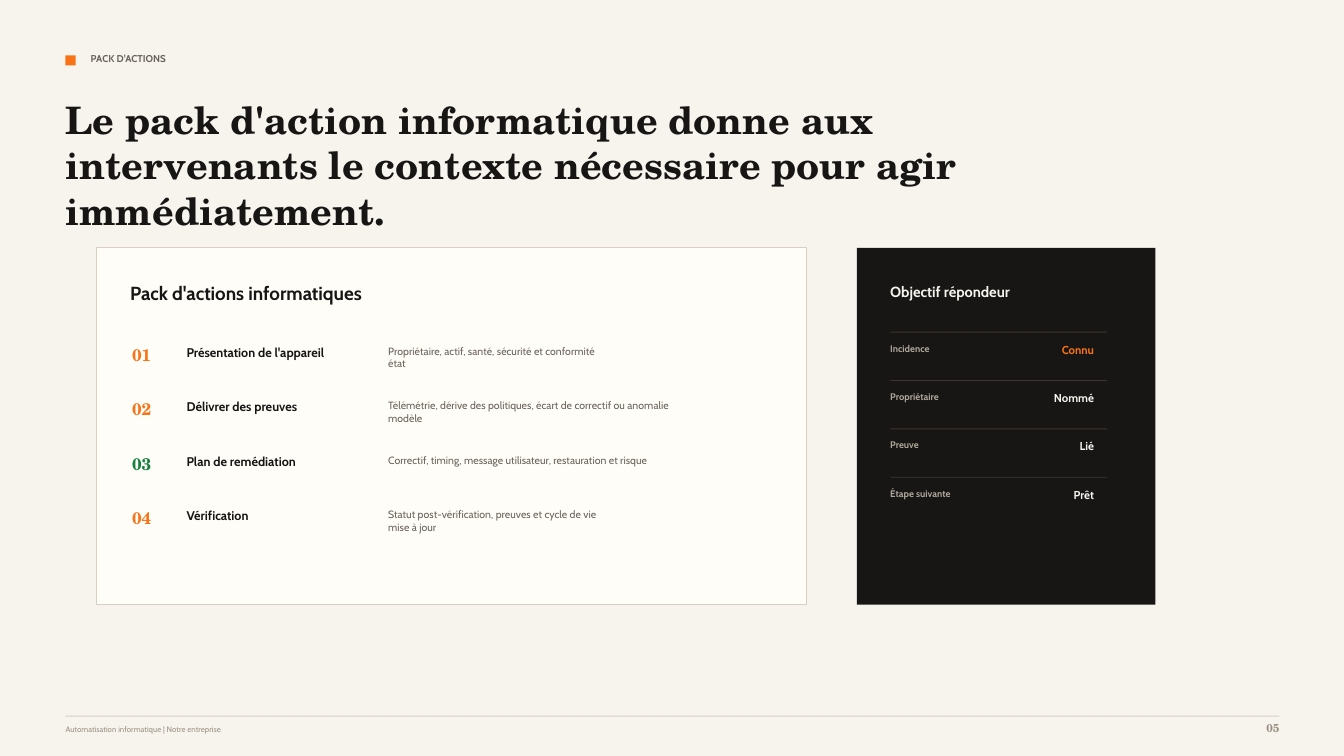
from pptx import Presentation
from pptx.dml.color import RGBColor
from pptx.enum.shapes import MSO_SHAPE
from pptx.enum.text import MSO_ANCHOR, PP_ALIGN
from pptx.util import Emu, Pt

RECT = MSO_SHAPE.RECTANGLE
TOP = MSO_ANCHOR.TOP
LEFT, RIGHT = PP_ALIGN.LEFT, PP_ALIGN.RIGHT

PX = 9144
W, H = 1333, 750
SANS, SERIF = "Cabin", "TeX Gyre Schola"
COLORS = {
    "paper": "F7F4EE", "card": "FFFDF8", "ink": "171614", "muted": "69635A",
    "orange": "F97316", "green": "15803D", "border": "D9D0C3",
    "dark_rule": "3C362E", "label": "AFA79B", "footer": "9A9184",
}

SECTION = "PACK D'ACTIONS"
TITLE = ("Le pack d'action informatique donne aux intervenants "
         "le contexte nécessaire pour agir immédiatement.")
PACK_TITLE = "Pack d'actions informatiques"
ACTIONS = [
    ("01", "orange", "Présentation de l'appareil",
     ["Propriétaire, actif, santé, sécurité et conformité", "état"]),
    ("02", "orange", "Délivrer des preuves",
     ["Télémétrie, dérive des politiques, écart de correctif ou anomalie", "modèle"]),
    ("03", "green", "Plan de remédiation",
     ["Correctif, timing, message utilisateur, restauration et risque"]),
    ("04", "orange", "Vérification",
     ["Statut post-vérification, preuves et cycle de vie", "mise à jour"]),
]
GOAL_TITLE = "Objectif répondeur"
GOALS = [
    ("Incidence", "Connu", "orange"),
    ("Propriétaire", "Nommé", "paper"),
    ("Preuve", "Lié", "paper"),
    ("Étape suivante", "Prêt", "paper"),
]
FOOTER = "Automatisation informatique | Notre entreprise"
PAGE = "05"

MARGIN = 65
CARD_TOP, CARD_H = 246, 354
PACK_X, PACK_W = 96, 704
GOAL_X, GOAL_W = 850, 296
PAD = 33
ACTION_TOP, ACTION_STEP = 342, 54
GOAL_TOP, GOAL_STEP = 329, 48

prs = Presentation()
prs.slide_width, prs.slide_height = Emu(W * PX), Emu(H * PX)
s = prs.slides.add_slide(prs.slide_layouts[6])


def color(name):
    return RGBColor.from_string(COLORS[name])


def box(x, y, w, h, fill, line=None):
    sp = s.shapes.add_shape(RECT, x * PX, y * PX, w * PX, h * PX)
    sp.shadow.inherit = False
    sp.fill.solid()
    sp.fill.fore_color.rgb = color(fill)
    if line:
        sp.line.color.rgb = color(line)
        sp.line.width = Pt(0.75)
    else:
        sp.line.fill.background()


def text(x, y, w, h, lines, size, ink, bold=True, font=SANS, align=LEFT):
    tf = s.shapes.add_textbox(x * PX, y * PX, w * PX, h * PX).text_frame
    tf.word_wrap = True
    tf.vertical_anchor = TOP
    tf.margin_left = tf.margin_top = tf.margin_right = tf.margin_bottom = 0
    for i, line in enumerate(lines):
        p = tf.add_paragraph() if i else tf.paragraphs[0]
        p.alignment = align
        r = p.add_run()
        r.text = line
        r.font.name = font
        r.font.size = Pt(size)
        r.font.bold = bold
        r.font.color.rgb = color(ink)


box(0, 0, W, H, "paper")
box(MARGIN, 55, 10, 10, "orange")
text(90, 52, 646, 19, [SECTION], 7.1, "muted")
text(MARGIN, 96, 938, 102, [TITLE], 27, "ink", font=SERIF)

box(PACK_X, CARD_TOP, PACK_W, CARD_H, "card", "border")
text(PACK_X + PAD, CARD_TOP + PAD, 312, 25, [PACK_TITLE], 13.5, "ink")
for i, (number, accent, name, details) in enumerate(ACTIONS):
    y = ACTION_TOP + i * ACTION_STEP
    text(131, y, 35, 25, [number], 12, accent, font=SERIF)
    text(185, y, 181, 19, [name], 9, "ink")
    text(385, y, 333, 31, details, 7.5, "muted", bold=False)

box(GOAL_X, CARD_TOP, GOAL_W, CARD_H, "ink")
text(GOAL_X + PAD, 281, 167, 21, [GOAL_TITLE], 10.5, "paper")
for i, (label, value, accent) in enumerate(GOALS):
    y = GOAL_TOP + i * GOAL_STEP
    box(GOAL_X + PAD, y, 215, 1, "dark_rule")
    text(GOAL_X + PAD, y + 11, 96, 17, [label], 6.8, "label")
    text(1000, y + 11, 85, 17, [value], 8.2, accent, align=RIGHT)

box(MARGIN, 710, 1204, 1, "border")
text(MARGIN, 719, 792, 15, [FOOTER], 5.6, "footer", bold=False)
text(1219, 715, 50, 19, [PAGE], 8.2, "footer", font=SERIF, align=RIGHT)

prs.save("out.pptx")
